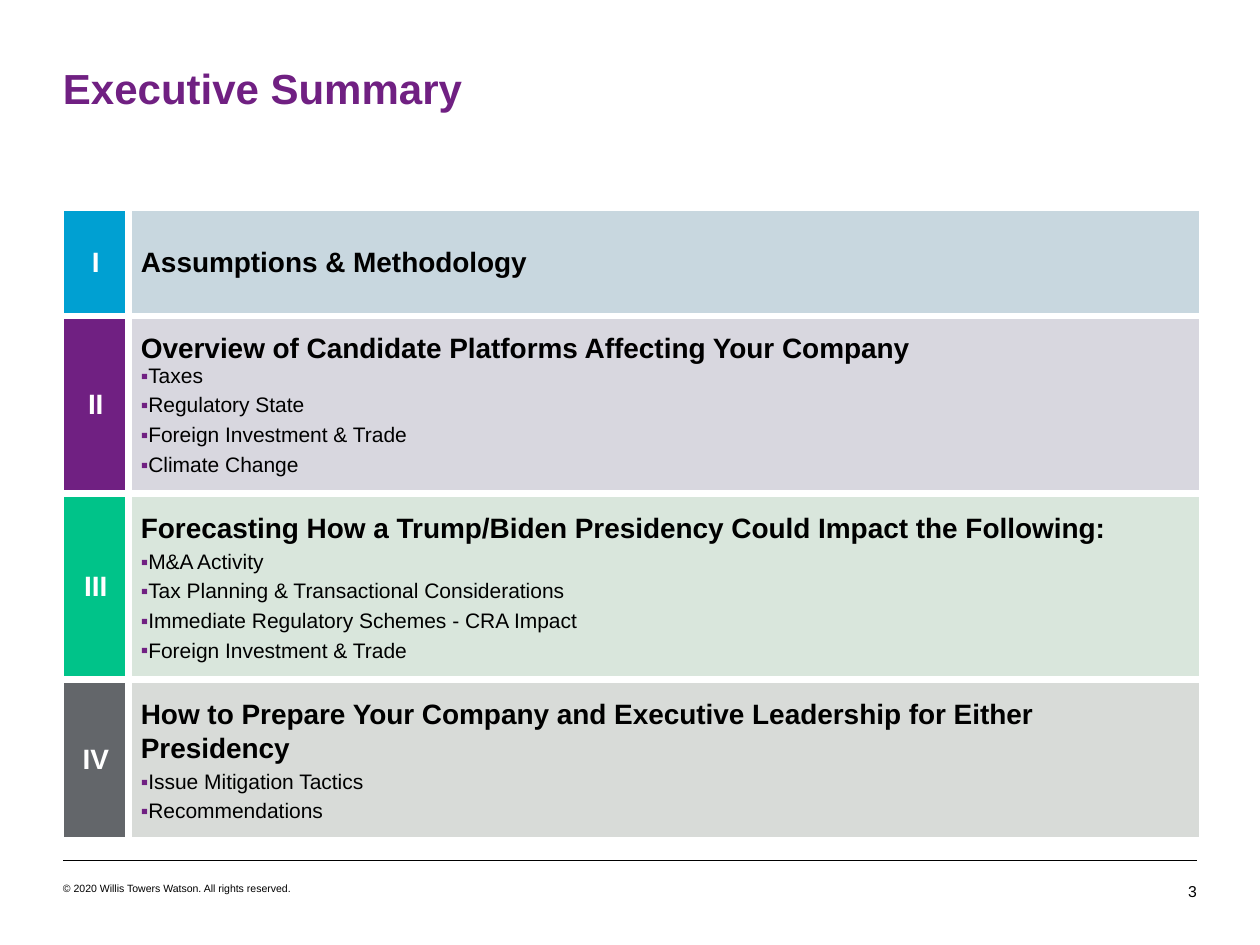
from lxml import etree
from pptx import Presentation
from pptx.dml.color import RGBColor
from pptx.enum.shapes import MSO_CONNECTOR
from pptx.enum.text import MSO_ANCHOR, PP_ALIGN
from pptx.oxml import parse_xml
from pptx.oxml.ns import nsdecls, qn
from pptx.util import Cm, Pt

LEFT, MID, RIGHT = PP_ALIGN.LEFT, PP_ALIGN.CENTER, PP_ALIGN.RIGHT
CENTRE = MSO_ANCHOR.MIDDLE
STRAIGHT = MSO_CONNECTOR.STRAIGHT
BLACK, WHITE, PURPLE = "000000", "FFFFFF", "702082"


def color(code):
    return RGBColor.from_string(code)


def write(para, text, size, code, bold=False, **form):
    """Fill a paragraph with one run; form holds paragraph attributes."""
    for name, value in form.items():
        setattr(para, name, value)
    run = para.add_run()
    run.text = text
    font = {"name": "Arial", "size": Pt(size), "bold": bold}
    for name, value in font.items():
        setattr(run.font, name, value)
    run.font.color.rgb = color(code)


deck = Presentation()
deck.slide_width, deck.slide_height = Cm(25.4), Cm(19.05)
slide = deck.slides.add_slide(deck.slide_layouts[6])
shapes = slide.shapes

# Footer rule
rule = shapes.add_connector(STRAIGHT, Cm(1.27), Cm(17.35), Cm(24.13), Cm(17.35))
rule.line.color.rgb = color(BLACK)
rule.line.width = Pt(0.25)
etree.SubElement(rule._element.spPr, qn("a:effectLst"))

# Title, page number and copyright
labels = [
    ("Executive Summary", (1.27, 1.27, 22.86, 0.86), 24, PURPLE, True, LEFT),
    ("3", (23.06, 17.78, 1.07, 0.38), 9, BLACK, False, RIGHT),
    ("© 2020 Willis Towers Watson. All rights reserved.",
     (1.27, 17.78, 14.66, 0.25), 6, BLACK, False, LEFT),
]
for text, place, size, code, bold, align in labels:
    frame = shapes.add_textbox(*map(Cm, place)).text_frame
    frame.word_wrap = True
    for side in ("left", "top", "right", "bottom"):
        setattr(frame, "margin_" + side, 0)
    write(frame.paragraphs[0], text, size, code, bold, alignment=align)

# Agenda table: numeral, row height, fills, heading, heading format, points
loose = {"line_spacing": 1.1, "space_after": Pt(3)}
agenda = [
    ("I", 2.13, "00A0D2", "C8D7DF", "Assumptions & Methodology", {}, []),
    ("II", 3.53, PURPLE, "D8D7DF",
     "Overview of Candidate Platforms Affecting Your Company", {},
     ["Taxes", "Regulatory State", "Foreign Investment & Trade",
      "Climate Change"]),
    ("III", 3.71, "00C389", "D9E6DC",
     "Forecasting How a Trump/Biden Presidency Could Impact the Following:",
     loose,
     ["M&A Activity", "Tax Planning & Transactional Considerations",
      "Immediate Regulatory Schemes - CRA Impact",
      "Foreign Investment & Trade"]),
    ("IV", 3.12, "63666A", "D8DBD8",
     "How to Prepare Your Company and Executive Leadership for Either "
     "Presidency", loose,
     ["Issue Mitigation Tactics", "Recommendations"]),
]
widths = [1.32, 21.59]
high = sum(item[1] for item in agenda)
table = shapes.add_table(len(agenda), 2, Cm(1.27), Cm(4.24),
                         Cm(sum(widths)), Cm(high)).table
table.first_row = table.horz_banding = False
for col, width in zip(table.columns, widths):
    col.width = Cm(width)

for row, (mark, tall, dark, pale, head, form, points) in enumerate(agenda):
    table.rows[row].height = Cm(tall)
    for col, fill in enumerate((dark, pale)):
        cell = table.cell(row, col)
        cell.vertical_anchor = CENTRE
        for side in ("left", "top", "right", "bottom"):
            setattr(cell, "margin_" + side, Cm(0.25))
        # Thin outer edges, thick gaps between the cells
        edges = {"L": col > 0, "R": col < 1, "T": row > 0, "B": True}
        props = cell._tc.get_or_add_tcPr()
        for edge, thick in edges.items():
            props.append(parse_xml(
                f'<a:ln{edge} {nsdecls("a")} w="{Pt(4.5 if thick else 1)}">'
                f'<a:solidFill><a:srgbClr val="{WHITE}"/></a:solidFill>'
                f'</a:ln{edge}>'))
        cell.fill.solid()
        cell.fill.fore_color.rgb = color(fill)

    write(table.cell(row, 0).text_frame.paragraphs[0], mark, 16, WHITE, True,
          alignment=MID)
    frame = table.cell(row, 1).text_frame
    write(frame.paragraphs[0], head, 16, BLACK, True, **form)
    for point in points:
        para = frame.add_paragraph()
        props = para._p.get_or_add_pPr()
        props.set("marL", "0")
        props.set("indent", str(-Cm(0.64)))
        tint = etree.SubElement(props, qn("a:buClr"))
        etree.SubElement(tint, qn("a:srgbClr"), val=PURPLE)
        etree.SubElement(props, qn("a:buFont"), typeface="Arial")
        etree.SubElement(props, qn("a:buChar"), char="▪")
        write(para, point, 12, BLACK, level=1, space_after=Pt(3.5))

deck.save("out.pptx")
